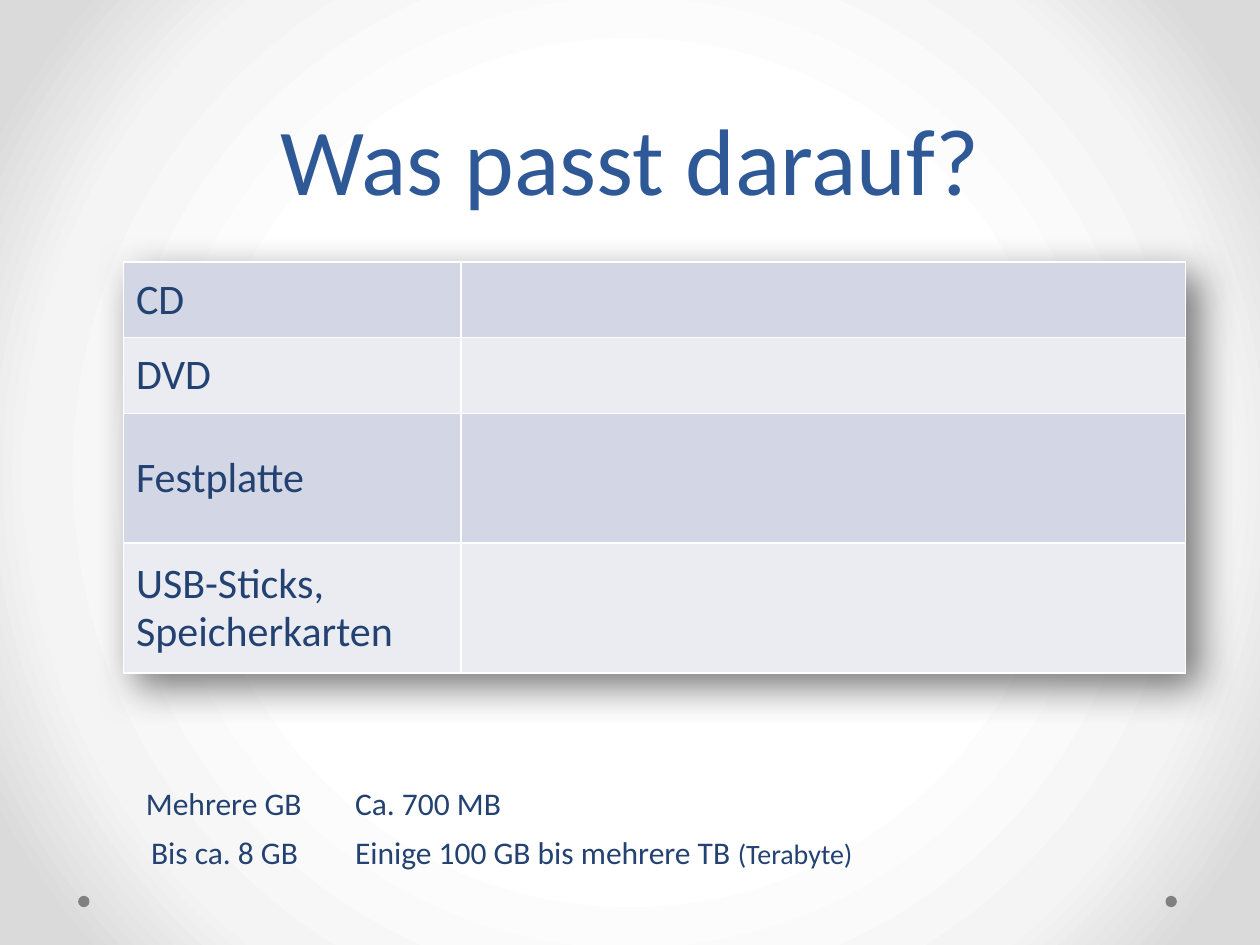
from lxml import etree
from pptx import Presentation
from pptx.dml.color import RGBColor
from pptx.enum.text import MSO_ANCHOR, MSO_AUTO_SIZE, PP_ALIGN
from pptx.enum.shapes import MSO_SHAPE
from pptx.oxml import parse_xml
from pptx.util import Inches, Pt

CENTER = PP_ALIGN.CENTER
BOTTOM = MSO_ANCHOR.BOTTOM
MIDDLE = MSO_ANCHOR.MIDDLE
GROW = MSO_AUTO_SIZE.SHAPE_TO_FIT_TEXT
OVAL = MSO_SHAPE.OVAL
NAMESPACE = 'xmlns:a="http://schemas.openxmlformats.org/drawingml/2006/main"'
NAVY = "234271"


def color(value):
    return RGBColor.from_string(value)


def add_text(paragraph, text, size=18, fill=NAVY, spacing=0.93):
    paragraph.line_spacing = spacing
    run = paragraph.add_run()
    run.text = text
    run.font.size = Pt(size)
    run.font.name = "Calibri"
    run.font.color.rgb = color(fill)


presentation = Presentation()
presentation.slide_width = Inches(10)
presentation.slide_height = Inches(7.5)
slide = presentation.slides.add_slide(presentation.slide_layouts[6])

background = slide.background.fill
background.gradient()
stops = "".join(
    f'<a:gs pos="{position * 1000}"><a:srgbClr val="{value}"/></a:gs>'
    for position, value in [(50, "FFFFFF"), (76, "F4F4F4"), (92, "DADADA")]
)
gradient = parse_xml(
    f'<a:gradFill {NAMESPACE} rotWithShape="1"><a:gsLst>{stops}</a:gsLst>'
    '<a:path path="circle"><a:fillToRect l="50000" t="50000" r="50000" b="50000"/>'
    "</a:path></a:gradFill>"
)
properties = slide.background._cSld.bg.bgPr
properties.replace(properties[0], gradient)

for left in (9.25, 0.62):
    dot = slide.shapes.add_shape(OVAL, Inches(left), Inches(7.11), Inches(0.09), Inches(0.09))
    dot.shadow.inherit = False
    dot.fill.solid()
    dot.fill.fore_color.rgb = color("808080")
    dot.line.fill.background()

title = slide.shapes.add_textbox(Inches(0.5), Inches(0), Inches(9), Inches(1.75))
title.text_frame.word_wrap = True
title.text_frame.vertical_anchor = BOTTOM
paragraph = title.text_frame.paragraphs[0]
paragraph.alignment = CENTER
add_text(paragraph, "Was passt darauf?", size=54, fill="2F5897", spacing=Pt(58))

media = ["CD", "DVD", "Festplatte", "USB-Sticks, Speicherkarten"]
row_heights = [0.6, 0.6, 1.03, 1.03]
table = slide.shapes.add_table(
    len(media), 2, Inches(0.98), Inches(2.08), Inches(8.43), Inches(3.25)
).table
table.first_row = False
table.horz_banding = False
table.columns[0].width = Inches(2.68)
table.columns[1].width = Inches(5.75)
shadow = parse_xml(
    f'<a:effectLst {NAMESPACE}><a:outerShdw blurRad="{Inches(0.32)}" dist="{Inches(0.15)}" '
    'dir="2700000" algn="tl" rotWithShape="0"><a:srgbClr val="333333">'
    '<a:alpha val="65000"/></a:srgbClr></a:outerShdw></a:effectLst>'
)
table._tbl.tblPr.insert(0, shadow)

for index, (medium, height) in enumerate(zip(media, row_heights)):
    table.rows[index].height = Inches(height)
    for cell in table.rows[index].cells:
        cell.vertical_anchor = MIDDLE
        cell.fill.solid()
        cell.fill.fore_color.rgb = color(["D2D6E5", "EAECF2"][index % 2])
        cell_properties = cell._tc.get_or_add_tcPr()
        for position, side in enumerate(["lnL", "lnR", "lnT", "lnB"]):
            border = etree.fromstring(
                f'<a:{side} {NAMESPACE} w="{Pt(1)}"><a:solidFill>'
                f'<a:srgbClr val="FFFFFF"/></a:solidFill></a:{side}>'
            )
            cell_properties.insert(position, border)
    add_text(table.cell(index, 0).text_frame.paragraphs[0], medium, size=24)

answers = [
    (2.72, 6.2, 1.37, [("Ca. 700 MB", 18)]),
    (1.1, 6.59, 1.38, [("Bis ca. 8 GB", 18)]),
    (2.72, 6.59, 4.2, [("Einige 100 GB bis mehrere TB ", 18), ("(Terabyte)", 16)]),
    (1.06, 6.2, 1.45, [("Mehrere GB", 18)]),
]
for left, top, width, parts in answers:
    answer = slide.shapes.add_textbox(Inches(left), Inches(top), Inches(width), Inches(0.38))
    answer.text_frame.word_wrap = False
    answer.text_frame.auto_size = GROW
    for text, size in parts:
        add_text(answer.text_frame.paragraphs[0], text, size=size)

presentation.save("out.pptx")
